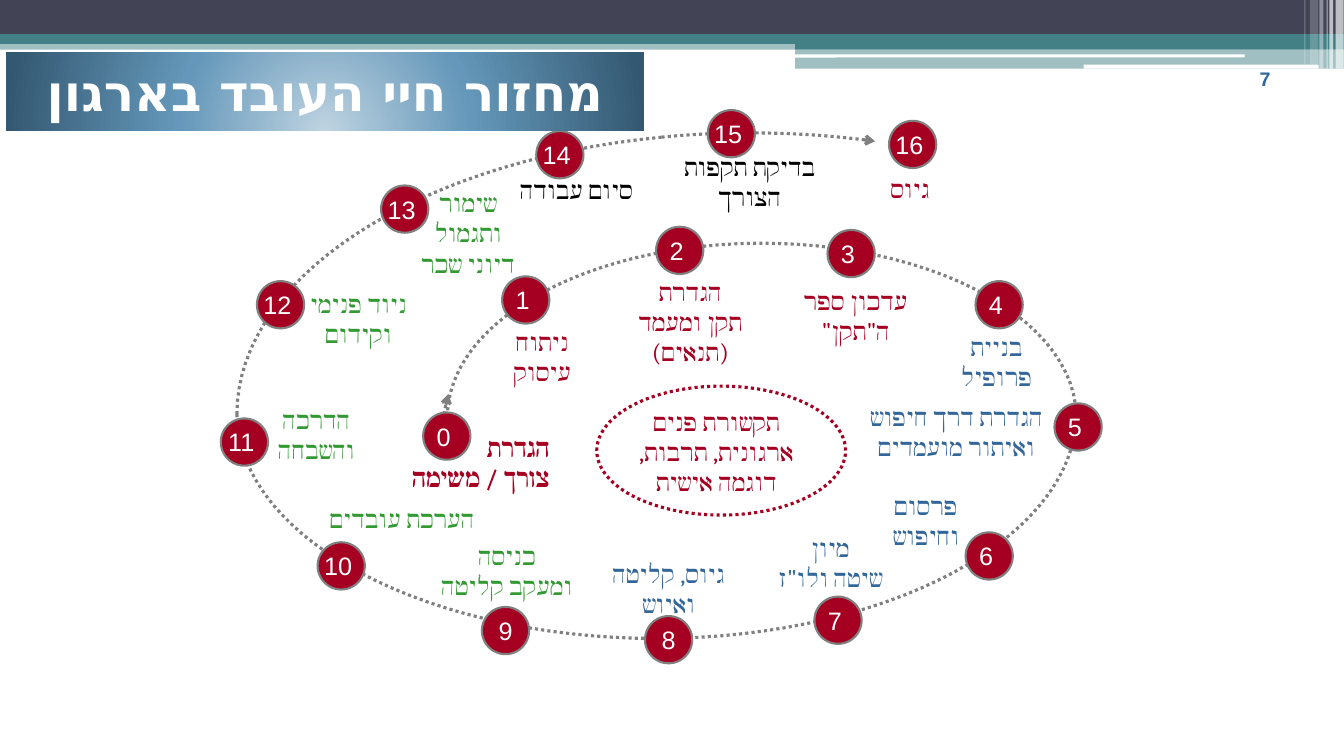
"""Build the employee life cycle slide: a numbered spiral of stages."""
from math import cos, radians, sin

from lxml import etree
from pptx import Presentation
from pptx.dml.color import RGBColor
from pptx.enum.dml import MSO_LINE
from pptx.enum.shapes import MSO_CONNECTOR, MSO_SHAPE
from pptx.enum.text import MSO_ANCHOR, PP_ALIGN
from pptx.oxml import parse_xml
from pptx.oxml.ns import nsdecls, qn
from pptx.util import Cm, Pt

RECT, ROUND, OVAL = MSO_SHAPE.RECTANGLE, MSO_SHAPE.ROUNDED_RECTANGLE, MSO_SHAPE.OVAL
STRAIGHT, DOTTED = MSO_CONNECTOR.STRAIGHT, MSO_LINE.ROUND_DOT
CENTER, RIGHT = PP_ALIGN.CENTER, PP_ALIGN.RIGHT
MIDDLE = MSO_ANCHOR.MIDDLE

WHITE = RGBColor(0xFF, 0xFF, 0xFF)
BLACK = RGBColor(0, 0, 0)
NAVY = RGBColor(0x42, 0x44, 0x56)
TEAL = RGBColor(0x43, 0x80, 0x86)
GRAY = RGBColor(0x80, 0x80, 0x80)
RED = RGBColor(0xA5, 0x00, 0x21)
BLUE = RGBColor(0x33, 0x66, 0x99)
GREEN = RGBColor(0x33, 0x99, 0x33)

TITLE = "מחזור חיי העובד בארגון"
TITLE_STOPS = [(0, "BED3E1"), (46, "6497B9"), (100, "335871")]
CORE = "תקשורת פנים ארגונית, תרבות, דוגמה אישית"

# kind, left, top, width, height, colour, opacity
BANDS = [
    (RECT, 0, 1.02, 33.87, 0.23, TEAL, 50),
    (RECT, 0, 0, 33.87, 0.86, NAVY, 100),
    (RECT, 0, 0.86, 33.87, 0.25, TEAL, 100),
    (RECT, 20.04, 0.99, 13.83, 0.25, TEAL, 100),
    (RECT, 20.04, 1.22, 13.83, 0.51, TEAL, 50),
    (ROUND, 20.02, 1.37, 11.35, 0.08, WHITE, 100),
    (ROUND, 27.31, 1.63, 5.92, 0.1, WHITE, 100),
    (RECT, 33.66, 0, 0.2, 1.73, WHITE, 65),
    (RECT, 33.5, 0, 0.1, 1.73, WHITE, 65),
    (RECT, 33.43, 0, 0.03, 1.73, WHITE, 60),
    (RECT, 33.25, 0, 0.1, 1.73, WHITE, 40),
    (RECT, 33.02, 0, 0.2, 1.63, WHITE, 20),
    (RECT, 32.87, 0, 0.03, 1.63, WHITE, 30),
]

# centre x, centre y, radius x, radius y, angles where the arcs meet
INNER = (19.2, 10.5, 7.92, 4.37, (180, 109, 0))
LOWER = (16.55, 10.41, 10.58, 5.68, (0, -90, -180))
OUTER = (18.92, 10.44, 12.95, 7.09, (180, 100, 76))

# node centre, label left, top, width, colour, label paragraphs
STAGES = [
    (11.26, 10.99, 9.88, 10.77, 4.22, RED, "הגדרת\nצורך / משימה"),
    (13.25, 7.56, 11.56, 8.1, 4.22, RED, "ניתוח\nעיסוק"),
    (17.13, 6.31, 15.29, 6.83, 4.22, RED, "הגדרת\nתקן ומעמד\n(תנאים)"),
    (21.45, 6.39, 19.46, 7.06, 4.22, RED, 'עדכון ספר ה"תקן"'),
    (25.18, 7.68, 23.44, 8.23, 3.35, BLUE, "בניית פרופיל"),
    (27.17, 10.76, 21.06, 9.98, 6.1, BLUE, "הגדרת דרך חיפוש ואיתור מועמדים"),
    (24.93, 14.01, 22.02, 12.22, 2.64, BLUE, "פרסום וחיפוש"),
    (21.12, 15.63, 18.82, 13.28, 4.22, BLUE, 'מיון\nשיטה ולו"ז'),
    (16.85, 16.12, 15.04, 13.94, 3.63, BLUE, "גיוס, קליטה ואיוש"),
    (12.74, 15.89, 10.67, 13.49, 4.22, GREEN, "כניסה\nומעקב קליטה"),
    (8.6, 14.26, 8.03, 12.57, 4.22, GREEN, "הערכת עובדים"),
    (6.16, 11.14, 5.87, 10.06, 4.22, GREEN, "הדרכה והשבחה"),
    (7.07, 7.68, 6.93, 7.14, 4.22, GREEN, "ניוד פנימי וקידום"),
    (10.2, 5.27, 10.16, 4.6, 3.28, GREEN, "שימור\nותגמול דיוני שכר"),
    (14.11, 3.9, 12.42, 4.27, 4.22, BLACK, "סיום עבודה"),
    (18.43, 3.37, 16.79, 3.68, 4.22, BLACK, "בדיקת תקפות הצורך"),
    (23, 3.64, 20.83, 4.24, 4.22, RED, "גיוס"),
]
NODE, LABEL_HEIGHT = 1.19, 2.13


def add_block(shapes, kind, left, top, width, height, color=None, opacity=100):
    shape = shapes.add_shape(kind, Cm(left), Cm(top), Cm(width), Cm(height))
    shape.shadow.inherit = False
    shape.line.fill.background()
    if color is None:
        shape.fill.background()
        return shape
    shape.fill.solid()
    shape.fill.fore_color.rgb = color
    if opacity < 100:
        tint = shape.fill._xPr.find(qn("a:solidFill"))[0]
        etree.SubElement(tint, qn("a:alpha")).set("val", str(opacity * 1000))
    return shape


def write(box, text, size, color, font, bold=False, align=CENTER, script_font=None):
    box.text_frame.text = text
    for para in box.text_frame.paragraphs:
        para.alignment = align
        para._p.get_or_add_pPr().set("rtl", "1")
        for span in para.runs:
            span.font.size, span.font.bold = Pt(size), bold
            span.font.color.rgb = color
            span.font.name = font
            properties = span._r.get_or_add_rPr()
            properties.set("lang", "he-IL")
            script = etree.SubElement(properties, qn("a:cs"))
            script.set("typeface", script_font or font)


def add_text(shapes, left, top, width, height, *style, wrap=True, **options):
    box = shapes.add_textbox(Cm(left), Cm(top), Cm(width), Cm(height))
    box.text_frame.word_wrap = wrap
    write(box, *style, **options)


def dot_line(shape, color, arrow=False):
    shape.line.color.rgb = color
    shape.line.width = Pt(2.25)
    shape.line.dash_style = DOTTED
    if arrow:
        etree.SubElement(shape.line._ln, qn("a:tailEnd")).set("type", "arrow")


def add_arc(shapes, ellipse, start, end, arrow=False):
    center_x, center_y, radius_x, radius_y, _ = ellipse
    steps = 30
    angles = [radians(start + (end - start) * i / steps) for i in range(steps + 1)]
    points = [(Cm(center_x + radius_x * cos(a)), Cm(center_y - radius_y * sin(a)))
              for a in angles]
    builder = shapes.build_freeform(*points[0])
    builder.add_line_segments(points[1:], close=False)
    arc = builder.convert_to_shape()
    arc.shadow.inherit = False
    arc.fill.background()
    dot_line(arc, GRAY, arrow)


def add_node(shapes, number, x, y):
    group = shapes.add_group_shape().shapes
    circle = add_block(group, OVAL, x - NODE / 2, y - NODE / 2, NODE, NODE, RED)
    circle.line.color.rgb = GRAY
    circle.line.width = Pt(1.5)
    width = 0.86 if number < 10 else 1.22
    shift = 0 if number in (8, 9) else 0.08
    add_text(group, x - shift - width / 2, y - 0.51, width, 1.02,
             str(number), 18, WHITE, "Arial", wrap=False)


def add_title(shapes):
    title = add_block(shapes, RECT, 0.15, 1.32, 16.08, 1.98, WHITE)
    stops = "".join(f'<a:gs pos="{at * 1000}"><a:srgbClr val="{color}"/></a:gs>'
                    for at, color in TITLE_STOPS)
    gradient = parse_xml(
        f'<a:gradFill {nsdecls("a")} rotWithShape="1"><a:gsLst>{stops}</a:gsLst>'
        '<a:path path="circle"><a:fillToRect l="50000" t="130000" r="50000" b="-30000"/>'
        '</a:path></a:gradFill>')
    solid = title.fill._xPr.find(qn("a:solidFill"))
    solid.getparent().replace(solid, gradient)
    title.text_frame.vertical_anchor = MIDDLE
    write(title, TITLE, 36, WHITE, "Arial", bold=True, script_font="DejaVu Sans")


def main():
    deck = Presentation()
    deck.slide_width, deck.slide_height = Cm(33.87), Cm(19.05)
    shapes = deck.slides.add_slide(deck.slide_layouts[6]).shapes
    for band in BANDS:
        add_block(shapes, *band)
    add_text(shapes, 30.1, 1.57, 3.56, 1.27, "7", 14, BLUE, "Arial", bold=True)

    for ellipse in (INNER, LOWER, OUTER):
        first, middle, last = ellipse[-1]
        add_arc(shapes, ellipse, first, middle)
        add_arc(shapes, ellipse, middle, last, arrow=ellipse is OUTER)
    start = shapes.add_connector(STRAIGHT, Cm(11.18), Cm(10.44), Cm(11.3), Cm(9.93))
    dot_line(start, GRAY, arrow=True)
    etree.SubElement(start._element.spPr, qn("a:effectLst"))

    for number, (x, y, left, top, width, color, label) in enumerate(STAGES):
        add_node(shapes, number, x, y)
        first = number == 0
        add_text(shapes, left, top, width, LABEL_HEIGHT, label, 18, color, "Cambria",
                 bold=first, align=RIGHT if first else CENTER)

    dot_line(add_block(shapes, OVAL, 15.04, 9.73, 6.27, 3.25), RED)
    add_text(shapes, 15.34, 10.11, 5.44, LABEL_HEIGHT, CORE, 18, RED, "Cambria")
    add_title(shapes)
    deck.save("out.pptx")


if __name__ == "__main__":
    main()
